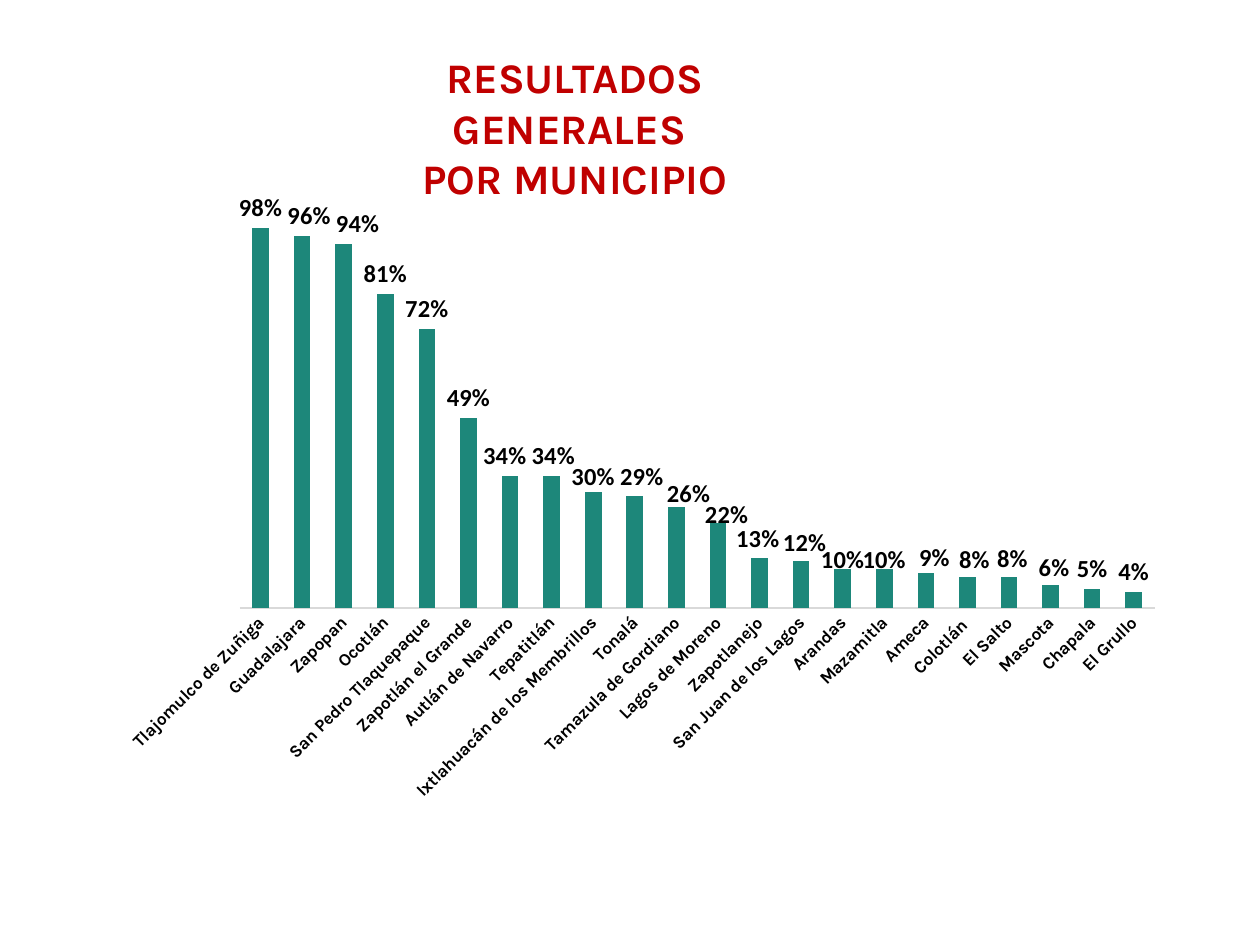
from lxml import etree
from pptx import Presentation
from pptx.chart.data import CategoryChartData
from pptx.dml.color import RGBColor
from pptx.enum.chart import XL_CHART_TYPE, XL_LABEL_POSITION, XL_TICK_MARK
from pptx.enum.text import MSO_AUTO_SIZE, PP_ALIGN
from pptx.oxml.ns import qn
from pptx.util import Pt

COLUMNS = XL_CHART_TYPE.COLUMN_CLUSTERED
OUTSIDE_END = XL_LABEL_POSITION.OUTSIDE_END
NO_TICKS = XL_TICK_MARK.NONE
CENTER = PP_ALIGN.CENTER
GROW = MSO_AUTO_SIZE.SHAPE_TO_FIT_TEXT

CHART_WIDTH, CHART_HEIGHT = 610, 391

RESULTS = [
    ("Tlajomulco de Zuñiga", 0.98),
    ("Guadalajara", 0.96),
    ("Zapopan", 0.94),
    ("Ocotlán", 0.81),
    ("San Pedro Tlaquepaque", 0.72),
    ("Zapotlán el Grande", 0.49),
    ("Autlán de Navarro", 0.34),
    ("Tepatitlán", 0.34),
    ("Ixtlahuacán de los Membrillos", 0.30),
    ("Tonalá", 0.29),
    ("Tamazula de Gordiano", 0.26),
    ("Lagos de Moreno", 0.22),
    ("Zapotlanejo", 0.13),
    ("San Juan de los Lagos", 0.12),
    ("Arandas", 0.10),
    ("Mazamitla", 0.10),
    ("Ameca", 0.09),
    ("Colotlán ", 0.08),
    ("El Salto", 0.08),
    ("Mascota", 0.06),
    ("Chapala", 0.05),
    ("El Grullo", 0.04),
]

# Shift of crowded labels, in points right and down, by column index
LABEL_SHIFTS = {
    1: (4, 0), 2: (8, 0), 6: (-3, 0), 7: (1, 0), 8: (0, 3), 9: (4, 1),
    10: (7, 4), 11: (5, 7), 12: (-1, 1), 13: (2, 1), 14: (0, 6),
    15: (0, 6), 16: (5, 3), 17: (4, 2), 18: (2, 1), 19: (2, 2),
}


def color(hex_text):
    return RGBColor.from_string(hex_text)


def style_font(font, name, size, hex_text, bold=True):
    font.name = name
    font.size = Pt(size)
    font.bold = bold
    font.color.rgb = color(hex_text)


def add_title(slide, lines, left, top, width, height):
    box = slide.shapes.add_textbox(Pt(left), Pt(top), Pt(width), Pt(height))
    frame = box.text_frame
    frame.word_wrap = False
    frame.auto_size = GROW
    frame.text = "\n".join(lines)
    for para in frame.paragraphs:
        para.alignment = CENTER
        for span in para.runs:
            style_font(span.font, "Karla", 24, "C00000")


def make_layout(**values):
    """Return a c:layout element with the given manual settings."""
    layout = etree.Element(qn("c:layout"))
    manual = etree.SubElement(layout, qn("c:manualLayout"))
    for name, value in values.items():
        etree.SubElement(manual, qn(f"c:{name}")).set("val", str(value))
    return layout


def place_plot_area(chart):
    area = chart._chartSpace.chart.plotArea
    for old in area.findall(qn("c:layout")):
        area.remove(old)
    area.insert(0, make_layout(layoutTarget="inner", xMode="edge", yMode="edge",
                               x=0.123, y=0.017, w=0.857, h=0.68))


def style_axes(chart):
    category_axis = chart.category_axis
    category_axis.major_tick_mark = NO_TICKS
    category_axis.minor_tick_mark = NO_TICKS
    category_axis.format.line.color.rgb = color("D9D9D9")
    category_axis.format.line.width = Pt(0.75)
    style_font(category_axis.tick_labels.font, "Karla", 10, "000000")
    body = category_axis._element.find(qn("c:txPr")).find(qn("a:bodyPr"))
    body.set("rot", str(-45 * 60000))

    value_axis = chart.value_axis
    value_axis.minimum_scale = 0
    value_axis.maximum_scale = 1.2
    value_axis.has_major_gridlines = False
    value_axis.visible = False


def label_columns(series):
    labels = series.data_labels
    labels.show_value = True
    labels.number_format = "0%"
    labels.number_format_is_linked = False
    labels.position = OUTSIDE_END
    style_font(labels.font, "Calibri", 14, "000000")
    for index in LABEL_SHIFTS:
        label = series.points[index].data_label
        label.position = OUTSIDE_END
        style_font(label.font, "Calibri", 14, "000000")
    for element in series._element.iter(qn("c:dLbl")):
        index = element.find(qn("c:idx"))
        right, down = LABEL_SHIFTS[int(index.get("val"))]
        index.addnext(make_layout(x=round(right / CHART_WIDTH, 4),
                                  y=round(down / CHART_HEIGHT, 4)))


def add_results_chart(slide, left, top):
    data = CategoryChartData(number_format="0%")
    data.categories = [name for name, share in RESULTS]
    data.add_series("Series 1", [share for name, share in RESULTS])
    chart = slide.shapes.add_chart(COLUMNS, Pt(left), Pt(top), Pt(CHART_WIDTH),
                                   Pt(CHART_HEIGHT), data).chart
    chart.has_title = False
    chart.has_legend = False
    style_font(chart.font, "Calibri", 10, "000000", bold=False)

    plot = chart.plots[0]
    plot.gap_width = 150
    plot.overlap = -25
    plot.vary_by_categories = False
    series = plot.series[0]
    series.format.fill.solid()
    series.format.fill.fore_color.rgb = color("1D877A")

    style_axes(chart)
    place_plot_area(chart)
    label_columns(series)


def main():
    deck = Presentation()
    deck.slide_width, deck.slide_height = Pt(720), Pt(540)
    slide = deck.slides.add_slide(deck.slide_layouts[6])
    add_title(slide, ["RESULTADOS GENERALES ", "POR MUNICIPIO"], 178.5, 26, 300, 87)
    add_results_chart(slide, 62, 75)
    deck.save("out.pptx")


if __name__ == "__main__":
    main()
